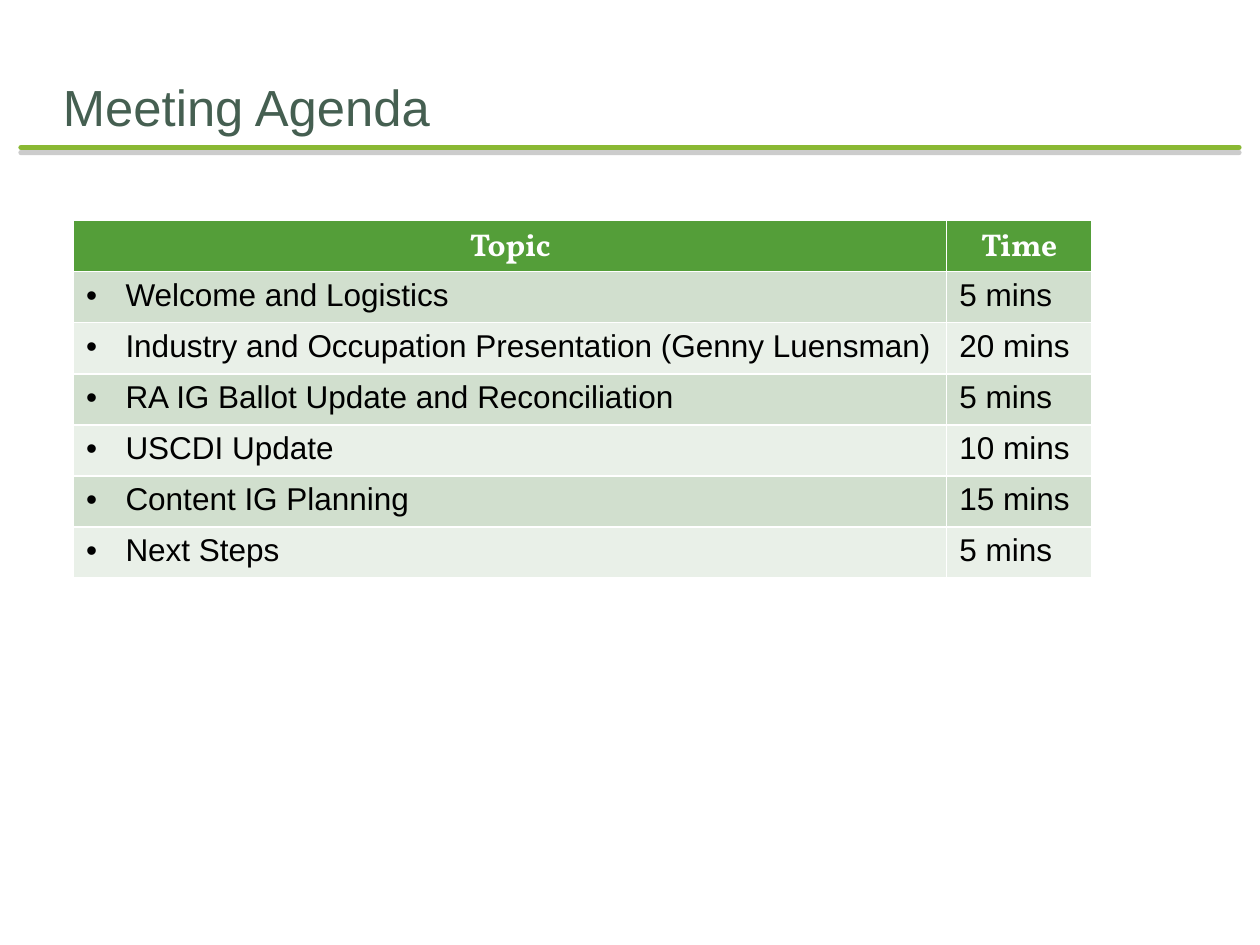
from lxml import etree
from pptx import Presentation
from pptx.dml.color import RGBColor
from pptx.enum.shapes import MSO_CONNECTOR
from pptx.enum.text import MSO_ANCHOR, PP_ALIGN
from pptx.oxml import parse_xml
from pptx.oxml.ns import qn
from pptx.util import Pt

STRAIGHT = MSO_CONNECTOR.STRAIGHT
BOTTOM = MSO_ANCHOR.BOTTOM
CENTER = PP_ALIGN.CENTER

HEADER_FILL = "549E39"
BAND_FILLS = ["E9F0E8", "D1DFCE"]
ROW_HEIGHT = Pt(29.2)
BULLET_INDENT = Pt(22.5)
SHADOW = """
<a:effectLst xmlns:a="http://schemas.openxmlformats.org/drawingml/2006/main">
  <a:outerShdw blurRad="0" dist="38100" dir="5400000" rotWithShape="0">
    <a:srgbClr val="808080"><a:alpha val="40000"/></a:srgbClr>
  </a:outerShdw>
</a:effectLst>"""

AGENDA = [
    ("Topic", "Time"),
    ("Welcome and Logistics", "5 mins"),
    ("Industry and Occupation Presentation (Genny Luensman)", "20 mins"),
    ("RA IG Ballot Update and Reconciliation", "5 mins"),
    ("USCDI Update", "10 mins"),
    ("Content IG Planning", "15 mins"),
    ("Next Steps", "5 mins"),
]


def rgb(color):
    return RGBColor.from_string(color)


def style_text(p, font, size, color, bold=False):
    f = p.runs[0].font
    f.name, f.size, f.bold = font, Pt(size), bold
    f.color.rgb = rgb(color)


prs = Presentation()
prs.slide_width, prs.slide_height = Pt(720), Pt(540)
s = prs.slides.add_slide(prs.slide_layouts[6])

# Rule under the title
rule = s.shapes.add_connector(STRAIGHT, Pt(12), Pt(84.2), Pt(708), Pt(84.2))
rule.line.color.rgb = rgb("8AB833")
rule.line.width = Pt(3)
rule.line._get_or_add_ln().set("cap", "rnd")
rule._element.spPr.append(parse_xml(SHADOW))

# Title
title = s.shapes.add_textbox(Pt(36), Pt(36), Pt(648), Pt(41.8))
tf = title.text_frame
tf.word_wrap = True
tf.vertical_anchor = BOTTOM
tf.margin_left = tf.margin_right = tf.margin_bottom = 0
tf.text = "Meeting Agenda"
style_text(tf.paragraphs[0], "Arial", 29, "455F51")

# Agenda table
table = s.shapes.add_table(len(AGENDA), 2, Pt(42), Pt(126), Pt(581.8),
                           ROW_HEIGHT * len(AGENDA)).table
table.columns[0].width, table.columns[1].width = Pt(499), Pt(82.8)

for i, entry in enumerate(AGENDA):
    table.rows[i].height = ROW_HEIGHT
    for j, text in enumerate(entry):
        cell = table.cell(i, j)
        cell.fill.solid()
        cell.fill.fore_color.rgb = rgb(BAND_FILLS[i % 2] if i else HEADER_FILL)
        cell.text_frame.text = text
        p = cell.text_frame.paragraphs[0]
        if i == 0:
            p.alignment = CENTER
            style_text(p, "Vollkorn", 18, "FFFFFF", bold=True)
            continue
        style_text(p, "Arial", 18, "000000")
        if j == 0:
            pPr = p._p.get_or_add_pPr()
            pPr.set("marL", str(BULLET_INDENT))
            pPr.set("indent", str(-BULLET_INDENT))
            etree.SubElement(pPr, qn("a:buFont")).set("typeface", "Arial")
            etree.SubElement(pPr, qn("a:buChar")).set("char", "•")

prs.save("out.pptx")
